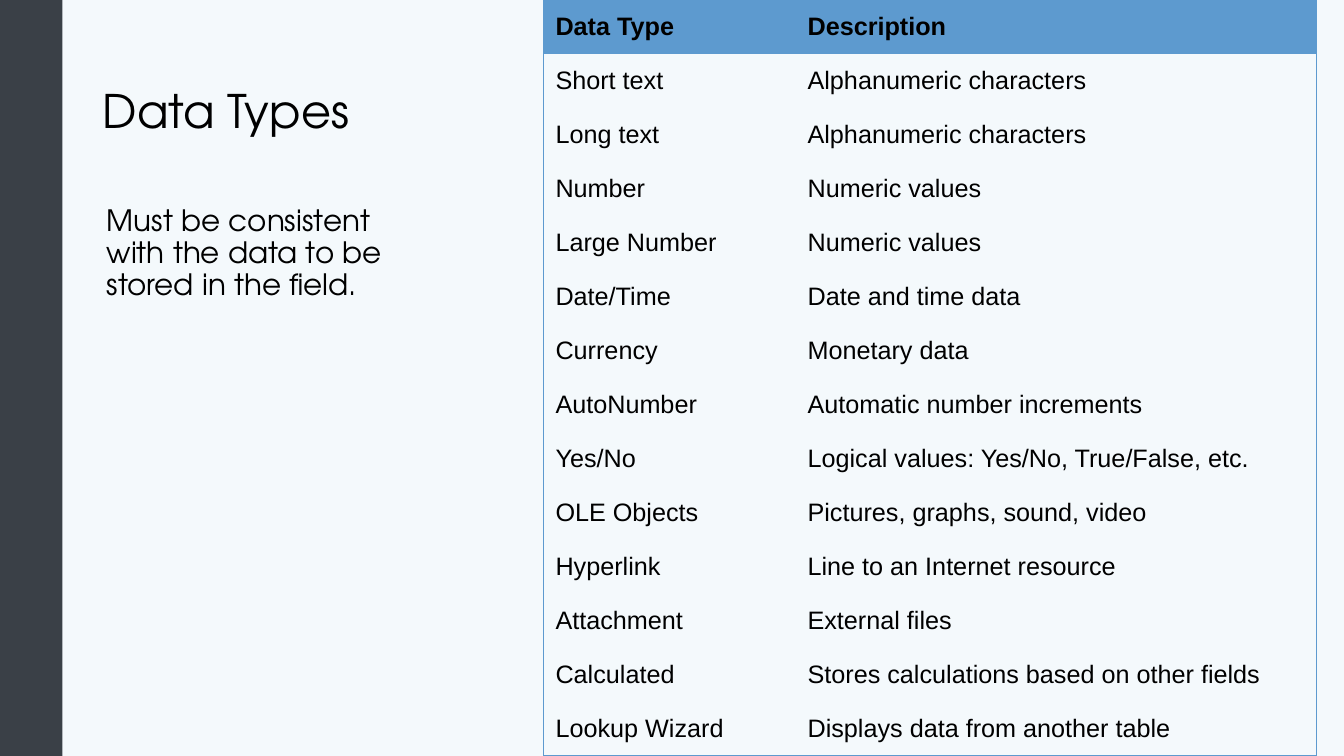
"""Build the Data Types slide: side bar, title, note and a two-column table."""
from lxml import etree
from pptx import Presentation
from pptx.dml.color import RGBColor
from pptx.enum import shapes, text
from pptx.oxml import ns
from pptx.util import Inches, Pt

COLORS = {"background": "F4F9FC", "bar": "3A4047", "blue": "5D9ACF", "text": "000000"}
HEADING_FONT, TABLE_FONT = "TeX Gyre Adventor", "Arial"
NO_STYLE = "{2D5ABB26-0587-4C30-8999-92F81FD0307C}"
SLIDE_W, SLIDE_H = 13.33, 7.5
BAR_W = 0.62
TABLE_LEFT = 5.39
COL_WIDTHS = (2.5, 5.17)
TITLE = "Data Types"
NOTE = "Must be consistent with the data to be stored in the field."
ROWS = [
    ("Data Type", "Description"),
    ("Short text", "Alphanumeric characters"),
    ("Long text", "Alphanumeric characters"),
    ("Number", "Numeric values"),
    ("Large Number", "Numeric values"),
    ("Date/Time", "Date and time data"),
    ("Currency", "Monetary data"),
    ("AutoNumber", "Automatic number increments"),
    ("Yes/No", "Logical values: Yes/No, True/False, etc."),
    ("OLE Objects", "Pictures, graphs, sound, video"),
    ("Hyperlink", "Line to an Internet resource"),
    ("Attachment", "External files"),
    ("Calculated", "Stores calculations based on other fields"),
    ("Lookup Wizard", "Displays data from another table"),
]


def paint(fill, name):
    fill.solid()
    fill.fore_color.rgb = RGBColor.from_string(COLORS[name])


def style(p, font, size, bold=False):
    for r in p.runs:
        r.font.name, r.font.size, r.font.bold = font, Pt(size), bold
        r.font.color.rgb = RGBColor.from_string(COLORS["text"])


def add_text(slide, box, words, size, anchor):
    tf = slide.shapes.add_textbox(*map(Inches, box)).text_frame
    tf.word_wrap, tf.vertical_anchor = True, anchor
    p = tf.paragraphs[0]
    p.text, p.line_spacing = words, 0.9
    style(p, HEADING_FONT, size)
    return p


def add_border(cell, side):
    tcPr = cell._tc.get_or_add_tcPr()
    ln = etree.SubElement(tcPr, ns.qn(f"a:ln{side}"), w=str(Pt(0.75)))
    fill = etree.SubElement(ln, ns.qn("a:solidFill"))
    etree.SubElement(fill, ns.qn("a:srgbClr"), val=COLORS["blue"])


def add_types_table(slide):
    frame = slide.shapes.add_table(
        len(ROWS), len(COL_WIDTHS), Inches(TABLE_LEFT), 0,
        Inches(sum(COL_WIDTHS)), Inches(SLIDE_H))
    table = frame.table
    table.horz_banding = False
    table._tbl.tblPr.find(ns.qn("a:tableStyleId")).text = NO_STYLE
    for column, width in zip(table.columns, COL_WIDTHS):
        column.width = Inches(width)
    last_row, last_col = len(ROWS) - 1, len(COL_WIDTHS) - 1
    for i, row in enumerate(ROWS):
        table.rows[i].height = Inches(SLIDE_H / len(ROWS))
        for j, words in enumerate(row):
            cell = table.cell(i, j)
            cell.text = words
            cell.vertical_anchor = text.MSO_ANCHOR.MIDDLE
            cell.margin_left = cell.margin_right = Inches(0.12)
            cell.margin_top = cell.margin_bottom = Inches(0.09)
            style(cell.text_frame.paragraphs[0], TABLE_FONT, 18, bold=i == 0)
            edges = {"L": j == 0, "R": j == last_col, "T": i == 0, "B": i == last_row}
            for side, is_edge in edges.items():
                if is_edge:
                    add_border(cell, side)
            if i == 0:
                paint(cell.fill, "blue")
            else:
                cell.fill.background()


def main():
    prs = Presentation()
    prs.slide_width, prs.slide_height = Inches(SLIDE_W), Inches(SLIDE_H)
    slide = prs.slides.add_slide(prs.slide_layouts[6])
    paint(slide.background.fill, "background")

    bar = slide.shapes.add_shape(
        shapes.MSO_SHAPE.RECTANGLE, 0, 0, Inches(BAR_W), Inches(SLIDE_H))
    bar.shadow.inherit = False
    paint(bar.fill, "bar")
    bar.line.fill.background()

    add_text(slide, (0.92, 0.4, 11.5, 1.45), TITLE, 33, text.MSO_ANCHOR.MIDDLE)
    note = add_text(slide, (0.92, 2, 3.37, 2.9), NOTE, 21, text.MSO_ANCHOR.TOP)
    note.space_before = Pt(7.5)
    note._p.get_or_add_pPr().set("marL", str(Inches(0.04)))
    add_types_table(slide)
    prs.save("out.pptx")


if __name__ == "__main__":
    main()
